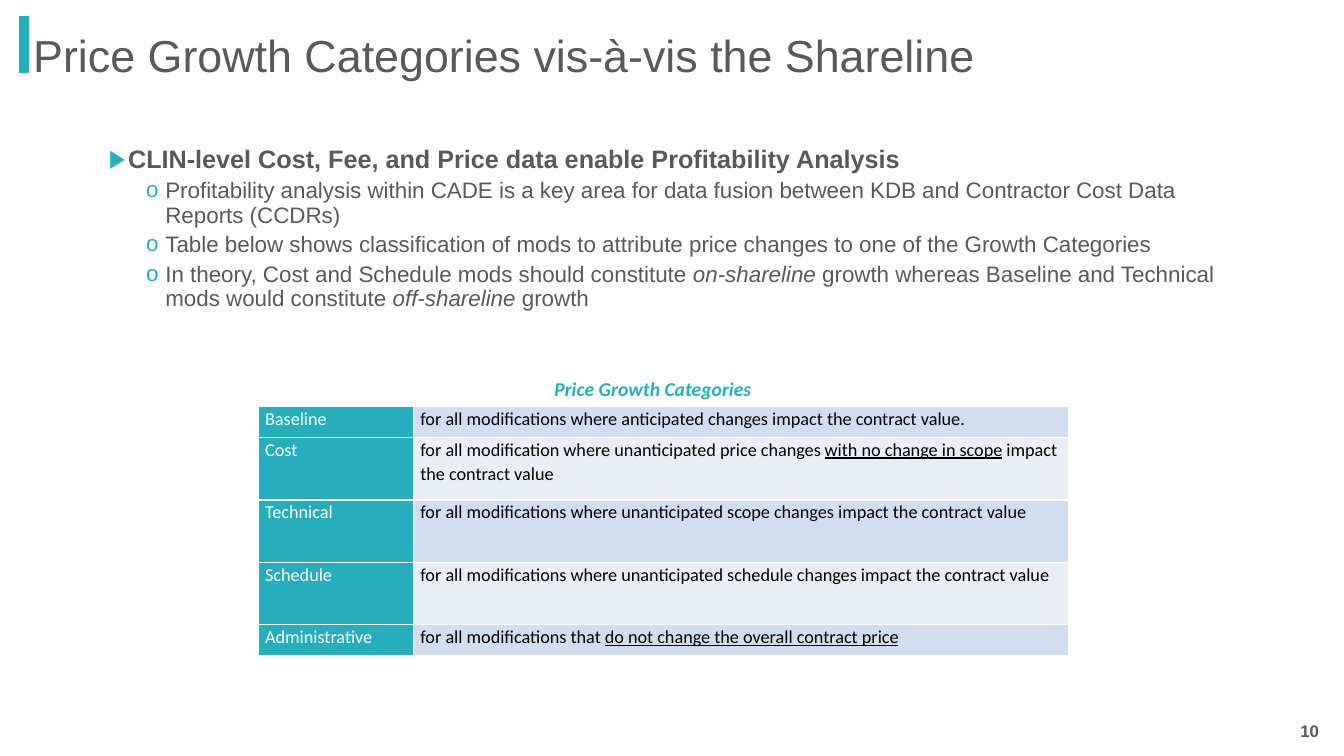
from lxml import etree
from pptx import Presentation
from pptx.dml.color import RGBColor
from pptx.enum.shapes import MSO_CONNECTOR
from pptx.enum.text import MSO_ANCHOR, PP_ALIGN
from pptx.oxml.ns import qn
from pptx.util import Inches, Pt

STRAIGHT = MSO_CONNECTOR.STRAIGHT
TOP, MIDDLE = MSO_ANCHOR.TOP, MSO_ANCHOR.MIDDLE
LEFT, RIGHT = PP_ALIGN.LEFT, PP_ALIGN.RIGHT

COLORS = {
    "teal": "26AEBD",
    "gray": "595959",
    "white": "FFFFFF",
    "black": "000000",
    "band_dark": "D2DEEF",
    "band_light": "EAEFF7",
}

# Each run is (text, style); style is "", "b", "i", "bi" or "u".
BULLETS = [
    (0, [("CLIN-level Cost, Fee, and Price data enable Profitability Analysis", "b")]),
    (1, [("Profitability analysis within CADE is a key area for data fusion between "
          "KDB and Contractor Cost Data Reports (CCDRs)", "")]),
    (1, [("Table below shows classification of mods to attribute price changes to "
          "one of the Growth Categories", "")]),
    (1, [("In theory, Cost and Schedule mods should constitute ", ""),
         ("on-shareline ", "i"),
         ("growth whereas Baseline and Technical mods would constitute ", ""),
         ("off-shareline ", "i"),
         ("growth", "")]),
]
# Bullet character, left indent, text size, space before
LEVELS = [("▶", 0.19, 18, 7.5), ("o", 0.56, 16, 3.8)]
HANGING = 0.19

# Category, row height, description
CATEGORIES = [
    ("Baseline", 0.31, [("for all modifications where anticipated changes impact "
                         "the contract value.", "")]),
    ("Cost", 0.62, [("for all modification where unanticipated price changes ", ""),
                    ("with no change in scope", "u"),
                    (" impact the contract value", "")]),
    ("Technical", 0.62, [("for all modifications where unanticipated scope changes "
                          "impact the contract value", "")]),
    ("Schedule", 0.62, [("for all modifications where unanticipated schedule changes "
                         "impact the contract value", "")]),
    ("Administrative", 0.31, [("for all modifications that ", ""),
                              ("do not change the overall contract price", "u")]),
]
COLUMN_WIDTHS = [1.54, 6.5]


def rgb(name):
    return RGBColor.from_string(COLORS[name])


def add_runs(p, runs, size, color, font="Arial"):
    for text, style in runs:
        r = p.add_run()
        r.text = text
        r.font.name = font
        r.font.size = Pt(size)
        r.font.color.rgb = rgb(color)
        r.font.bold = "b" in style
        r.font.italic = "i" in style
        r.font.underline = "u" in style


def add_text_frame(slide, box, anchor=MIDDLE, side=0.1):
    tf = slide.shapes.add_textbox(*map(Inches, box)).text_frame
    tf.word_wrap = True
    tf.vertical_anchor = anchor
    tf.margin_left = tf.margin_right = Inches(side)
    return tf


def add_label(slide, box, runs, size, color, font="Arial", align=LEFT, side=0.1):
    p = add_text_frame(slide, box, side=side).paragraphs[0]
    p.alignment = align
    add_runs(p, runs, size, color, font)


def add_title(slide, box, title):
    """Title with a thick accent bar on its left edge."""
    left, top, _, _ = box
    x, y = left - 0.01, top + 0.03
    bar = slide.shapes.add_connector(
        STRAIGHT, Inches(x), Inches(y), Inches(x), Inches(y + 0.56))
    bar.line.color.rgb = rgb("teal")
    bar.line.width = Pt(7.5)
    etree.SubElement(bar._element.spPr, qn("a:effectLst"))
    add_label(slide, box, [(title, "")], 32, "gray", side=0.08)


def set_bullet(p, char, indent):
    pPr = p._p.get_or_add_pPr()
    pPr.set("marL", str(Inches(indent)))
    pPr.set("indent", str(-Inches(HANGING)))
    color = etree.SubElement(pPr, qn("a:buClr"))
    etree.SubElement(color, qn("a:srgbClr"), val=COLORS["teal"])
    etree.SubElement(pPr, qn("a:buFont"), typeface="Arial")
    etree.SubElement(pPr, qn("a:buChar"), char=char)


def add_bullets(slide, box):
    tf = add_text_frame(slide, box, TOP, side=0.09)
    for i, (level, runs) in enumerate(BULLETS):
        char, indent, size, before = LEVELS[level]
        p = tf.paragraphs[0] if i == 0 else tf.add_paragraph()
        p.level = level
        p.line_spacing = 0.9
        if i:
            p.space_before = Pt(before)
        set_bullet(p, char, indent)
        add_runs(p, runs, size, "gray")


def set_borders(cell):
    tcPr = cell._tc.get_or_add_tcPr()
    for i, side in enumerate(("lnL", "lnR", "lnT", "lnB")):
        ln = etree.Element(qn(f"a:{side}"), w=str(Pt(1)))
        fill = etree.SubElement(ln, qn("a:solidFill"))
        etree.SubElement(fill, qn("a:srgbClr"), val=COLORS["white"])
        tcPr.insert(i, ln)


def fill_cell(cell, runs, color, fill):
    cell.fill.solid()
    cell.fill.fore_color.rgb = rgb(fill)
    cell.margin_left = cell.margin_right = Inches(0.07)
    cell.margin_top = cell.margin_bottom = 0
    set_borders(cell)
    p = cell.text_frame.paragraphs[0]
    p.line_spacing = 1.07
    add_runs(p, runs, 13, color, "Calibri")


def add_category_table(slide, box):
    """Captioned table of growth categories."""
    left, top, _, _ = box
    add_label(slide, (left + 2.84, top - 0.34, 2.35, 0.34),
              [("Price Growth Categories", "bi")], 14, "teal", "Calibri")
    table = slide.shapes.add_table(
        len(CATEGORIES), len(COLUMN_WIDTHS), *map(Inches, box)).table
    for column, width in zip(table.columns, COLUMN_WIDTHS):
        column.width = Inches(width)
    for i, (name, height, description) in enumerate(CATEGORIES):
        table.rows[i].height = Inches(height)
        band = "band_light" if i % 2 else "band_dark"
        fill_cell(table.cell(i, 0), [(name, "")], "white", "teal")
        fill_cell(table.cell(i, 1), description, "black", band)


def main():
    prs = Presentation()
    prs.slide_width, prs.slide_height = Inches(13.33), Inches(7.5)
    slide = prs.slides.add_slide(prs.slide_layouts[6])
    add_title(slide, (0.25, 0.13, 10.37, 0.82),
              "Price Growth Categories vis-à-vis the Shareline")
    add_bullets(slide, (0.99, 1.41, 11.41, 1.8))
    add_category_table(slide, (2.56, 4.03, 8.04, 2.49))
    add_label(slide, (12.68, 7, 0.5, 0.5), [("10", "b")], 12, "gray", align=RIGHT)
    prs.save("out.pptx")


if __name__ == "__main__":
    main()
